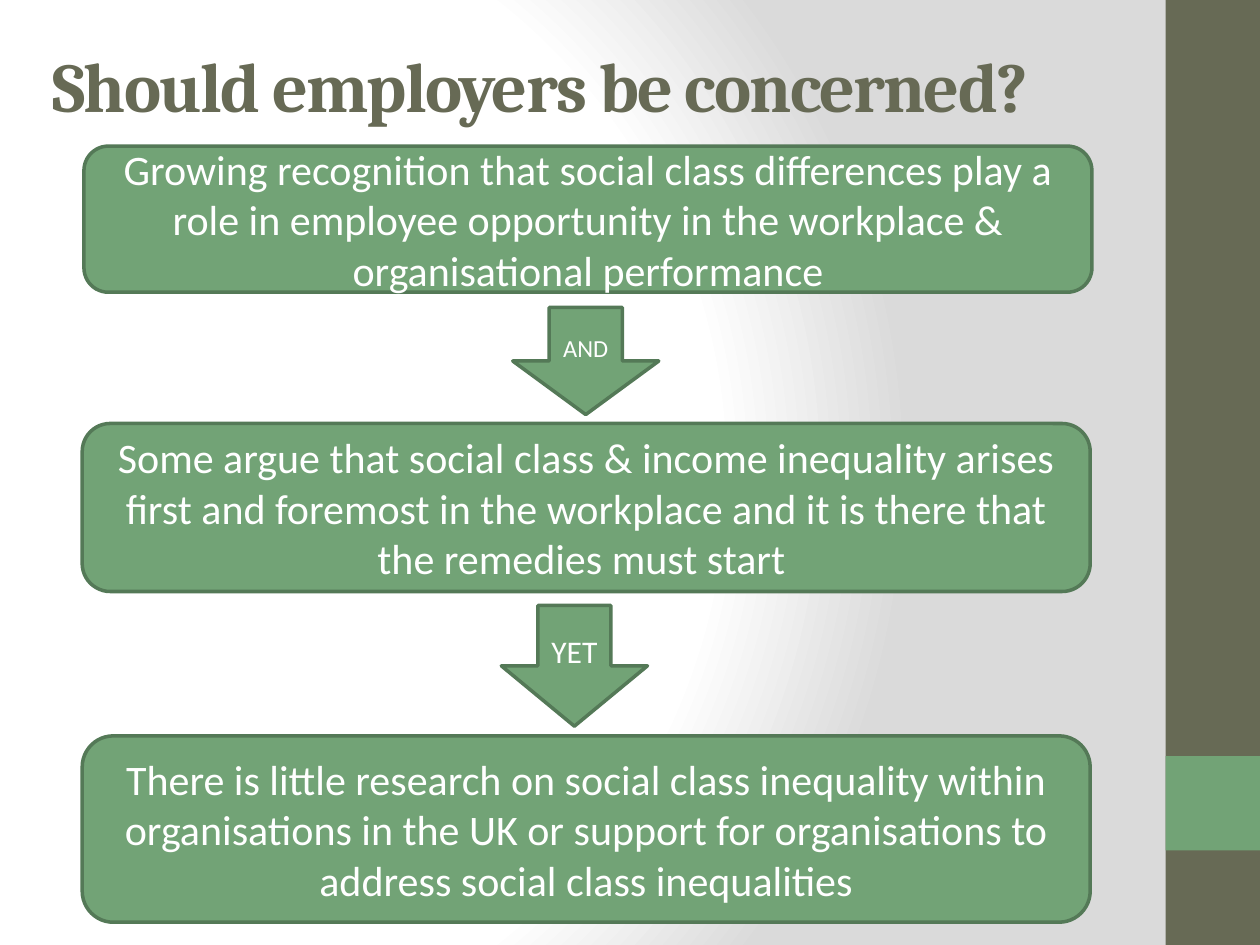
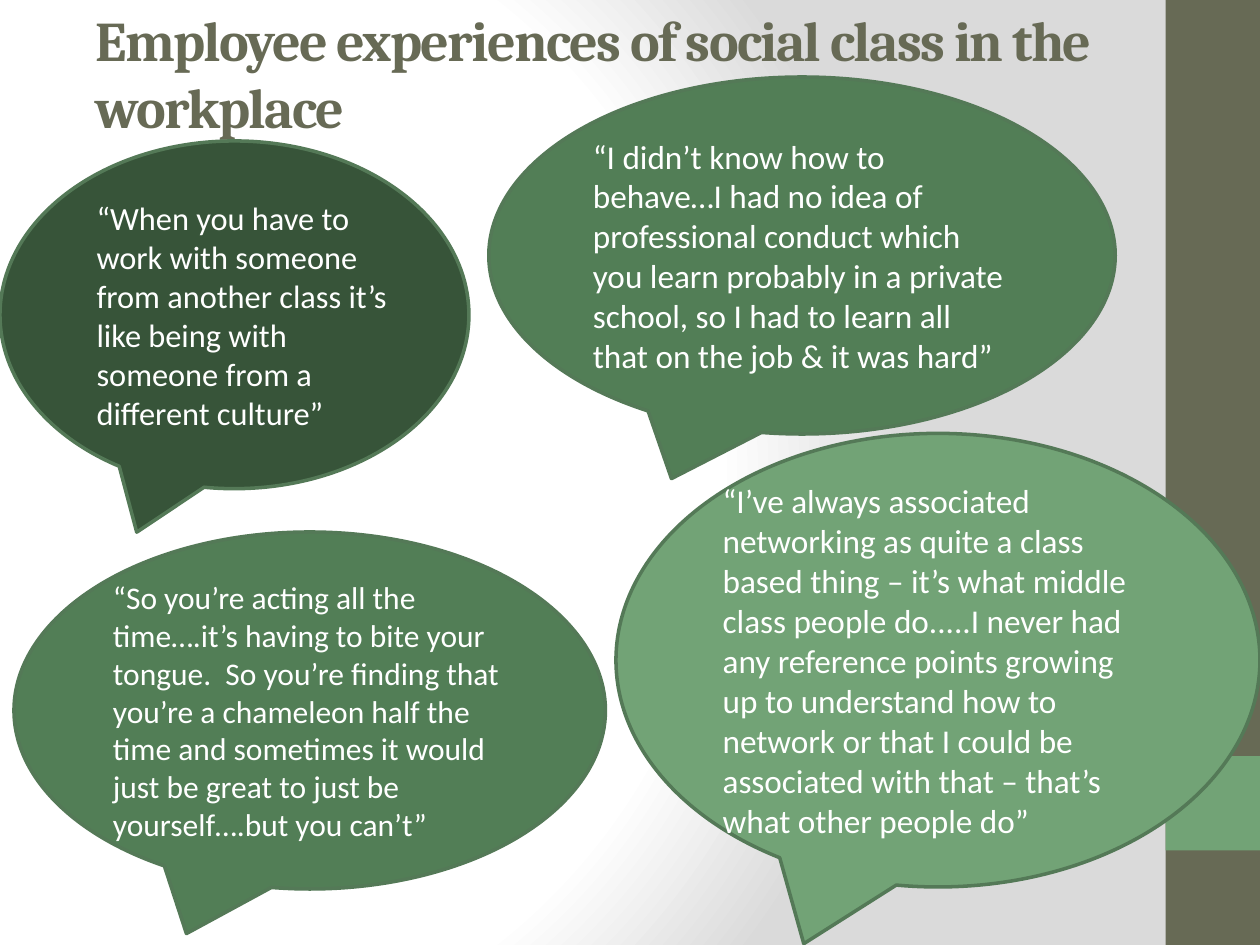
from pptx import Presentation
from pptx.dml.color import RGBColor
from pptx.enum import shapes, text
from pptx.oxml import parse_xml
from pptx.oxml.ns import nsdecls, qn
from pptx.util import Pt

KIND = shapes.MSO_SHAPE
ALIGN = text.PP_ALIGN

OLIVE = RGBColor(0x67, 0x6A, 0x55)
LIGHT = RGBColor(0x72, 0xA3, 0x76)
MID = RGBColor(0x52, 0x7E, 0x56)
DARK = RGBColor(0x37, 0x54, 0x39)
EDGE = RGBColor(0x54, 0x79, 0x57)
WHITE = RGBColor(0xFF, 0xFF, 0xFF)

GLOW = f"""<a:gradFill {nsdecls('a')} rotWithShape="1">
  <a:gsLst>
    <a:gs pos="0"><a:srgbClr val="FFFFFF"/></a:gs>
    <a:gs pos="75000"><a:srgbClr val="FFFFFF"/></a:gs>
    <a:gs pos="100000"><a:srgbClr val="DADADA"/></a:gs>
  </a:gsLst>
  <a:path path="circle">
    <a:fillToRect l="20000" t="50000" r="100000" b="50000"/>
  </a:path>
</a:gradFill>"""


class Deck:
    """Holds the presentation, its style and the current slide."""

    def __init__(self):
        self.prs = Presentation()
        self.prs.slide_width, self.prs.slide_height = Pt(720), Pt(540)
        master = self.prs.slide_master
        master.background.fill.solid()
        plain = master.element.find(".//" + qn("p:bgPr")).find(qn("a:solidFill"))
        plain.getparent().replace(plain, parse_xml(GLOW))

    def page(self, title, area, size):
        """Start a slide with its side bands and title."""
        self.slide = self.prs.slides.add_slide(self.prs.slide_layouts[6])
        self.shape(KIND.RECTANGLE, (666, 0, 54, 540), OLIVE)
        self.shape(KIND.RECTANGLE, (666, 432, 54, 54), LIGHT)
        box = self.slide.shapes.add_textbox(*map(Pt, area))
        self.label(box, title, size, "Cambria", OLIVE)
        font = box.text_frame.paragraphs[0].runs[0].font
        font.bold = True
        font._element.set("spc", "-100")

    def shape(self, kind, area, fill, line=None):
        item = self.slide.shapes.add_shape(kind, *map(Pt, area))
        item.shadow.inherit = False
        item.fill.solid()
        item.fill.fore_color.rgb = fill
        if line is None:
            item.line.fill.background()
        else:
            item.line.color.rgb = line
            item.line.width = Pt(2)
        return item

    def label(self, item, words, size, face="Calibri", color=WHITE, align=ALIGN.LEFT):
        frame = item.text_frame
        frame.word_wrap = True
        frame.vertical_anchor = text.MSO_ANCHOR.MIDDLE
        frame.text = words
        para = frame.paragraphs[0]
        para.alignment = align
        font = para.runs[0].font
        font.name, font.size, font.color.rgb = face, Pt(size), color

    def box(self, area, words):
        item = self.shape(KIND.ROUNDED_RECTANGLE, area, LIGHT, EDGE)
        self.label(item, words, 24, align=ALIGN.CENTER)

    def arrow(self, area, word, size):
        item = self.shape(KIND.DOWN_ARROW, area, LIGHT, EDGE)
        self.label(item, word, size, align=ALIGN.CENTER)

    def quote(self, area, words, size, fill, inset=7.2):
        item = self.shape(KIND.OVAL_CALLOUT, area, fill, EDGE)
        self.label(item, words, size)
        item.text_frame.margin_left = Pt(inset)


def concern(deck):
    deck.page("Should employers be concerned?", (23, 21.6, 636, 53.3), 40)
    deck.box((48, 83.5, 576, 83.5),
             "Growing recognition that social class differences play a role in employee "
             "opportunity in the workplace & organisational performance")
    deck.arrow((293, 175.7, 83.5, 61.2), "AND", 14)
    deck.box((47, 242, 576, 96),
             "Some argue that social class & income inequality arises first and foremost "
             "in the workplace and it is there that the remedies must start ")
    deck.arrow((286.5, 346, 83.5, 69), "YET", 18)
    deck.box((47, 420.5, 576, 106.5),
             "There is little research on social class inequality within organisations in "
             "the UK or support for organisations to address social class inequalities")


def voices(deck):
    deck.page("Employee experiences of social class in the workplace",
              (47.5, 12, 619, 59), 32)
    deck.quote((0, 80.6, 268, 198.7),
               "“When you have to work with someone from another class it’s like being "
               "with someone from a different culture”", 18.5, DARK, inset=16)
    deck.quote((352, 247.7, 368, 259.2),
               "“I’ve always associated networking as quite a class based thing – it’s "
               "what middle class people do.....I never had any reference points growing "
               "up to understand how to network or that I could be associated with that "
               "– that’s what other people do”", 19, LIGHT)
    deck.quote((279.3, 44, 358, 204),
               "“I didn’t know how to behave…I had no idea of professional conduct which "
               "you learn probably in a private school, so I had to learn all that on the "
               "job & it was hard”", 19, MID)
    deck.quote((8, 304, 338, 204),
               "“So you’re acting all the time….it’s having to bite your tongue.  So "
               "you’re finding that you’re a chameleon half the time and sometimes it "
               "would just be great to just be yourself….but you can’t”", 18, MID)


def main():
    deck = Deck()
    concern(deck)
    voices(deck)
    deck.prs.save("out.pptx")


if __name__ == "__main__":
    main()
